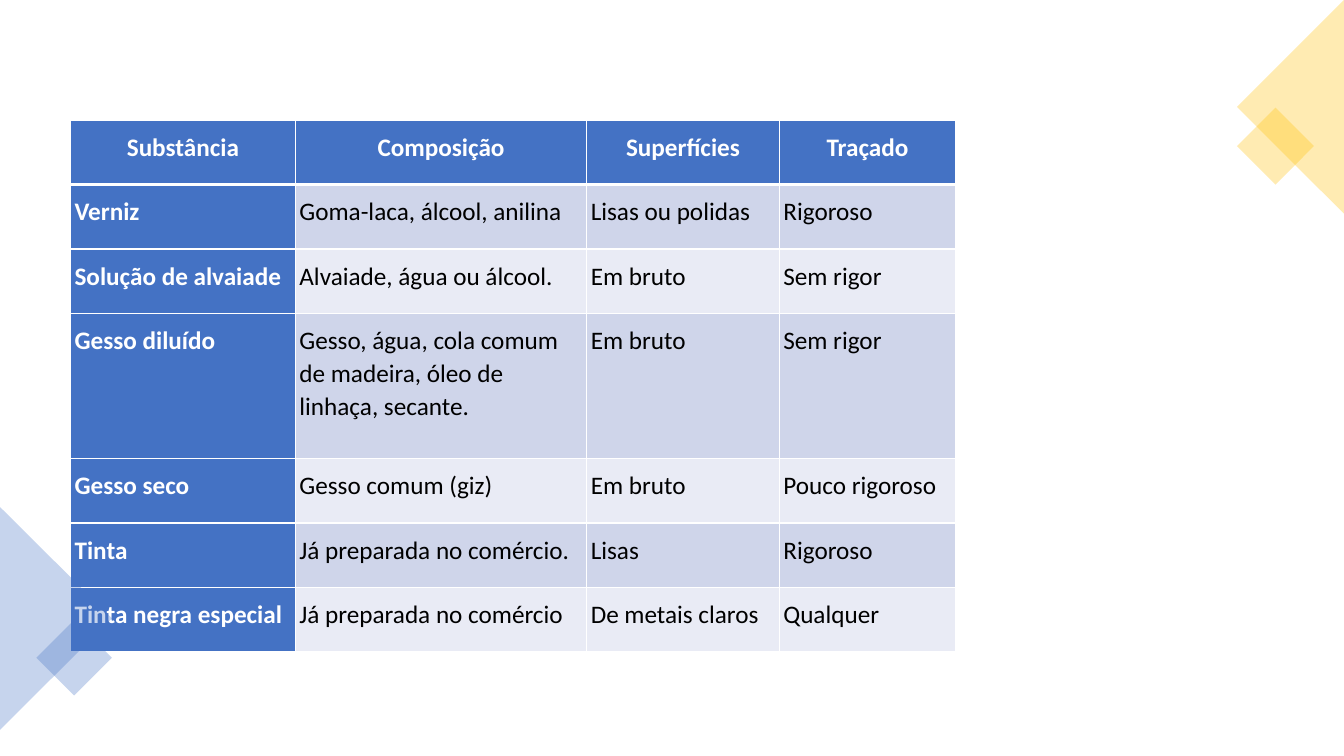
import dataclasses

import lxml.etree
import pptx
import pptx.dml.color
import pptx.enum.shapes
import pptx.enum.text
import pptx.oxml.ns
import pptx.util

Inches = pptx.util.Inches
Pt = pptx.util.Pt
RGBColor = pptx.dml.color.RGBColor
Shape = pptx.enum.shapes.MSO_SHAPE
Align = pptx.enum.text.PP_ALIGN
qn = pptx.oxml.ns.qn


@dataclasses.dataclass(frozen=True)
class Theme:
    font: str = "Calibri"
    size: int = 18
    blue: str = "4472C4"
    gold: str = "FFC000"
    band_dark: str = "CFD5EA"
    band_light: str = "E9EBF5"
    white: str = "FFFFFF"
    black: str = "000000"
    opacity: int = 30
    thin: int = 1
    thick: int = 3


class SlideBuilder:
    def __init__(self, prs, theme):
        self.theme = theme
        self.slide = prs.slides.add_slide(prs.slide_layouts[6])

    def borders(self, cell, top, bottom):
        tcPr = cell._tc.get_or_add_tcPr()
        widths = {"lnL": self.theme.thin, "lnR": self.theme.thin, "lnT": top, "lnB": bottom}
        for side, width in widths.items():
            ln = lxml.etree.SubElement(tcPr, qn("a:" + side), w=str(Pt(width)))
            fill = lxml.etree.SubElement(ln, qn("a:solidFill"))
            lxml.etree.SubElement(fill, qn("a:srgbClr"), val=self.theme.white)

    def cell(self, cell, text, row, col):
        t = self.theme
        heading = row == 0 or col == 0
        self.borders(cell, t.thick if row == 1 else t.thin, t.thick if row == 0 else t.thin)
        band = t.band_dark if row % 2 else t.band_light
        cell.fill.solid()
        cell.fill.fore_color.rgb = RGBColor.from_string(t.blue if heading else band)
        cell.margin_left = cell.margin_right = Inches(0.04)
        cell.margin_top, cell.margin_bottom = Inches(0.1), 0
        cell.text_frame.text = text
        p = cell.text_frame.paragraphs[0]
        p.alignment = Align.CENTER if row == 0 else Align.LEFT
        p.line_spacing = 1.07
        p.space_after = Pt(8)
        r = p.runs[0]
        r.font.name = t.font
        r.font.size = Pt(t.size)
        r.font.bold = heading
        r.font.color.rgb = RGBColor.from_string(t.white if heading else t.black)

    def table(self, left, top, widths, heights, rows):
        frame = self.slide.shapes.add_table(
            len(heights), len(widths), Inches(left), Inches(top),
            Inches(sum(widths)), Inches(sum(heights)))
        table = frame.table
        for column, width in zip(table.columns, widths):
            column.width = Inches(width)
        for line, height in zip(table.rows, heights):
            line.height = Inches(height)
        for row, texts in enumerate(rows):
            for col, text in enumerate(texts):
                self.cell(table.cell(row, col), text, row, col)

    def ornament(self, kind, left, top, width, height, rotation, color):
        sp = self.slide.shapes.add_shape(
            kind, Inches(left), Inches(top), Inches(width), Inches(height))
        sp.rotation = rotation
        sp.shadow.inherit = False
        sp.line.fill.background()
        sp.fill.solid()
        sp.fill.fore_color.rgb = RGBColor.from_string(color)
        clr = sp._element.spPr.find(qn("a:solidFill")).find(qn("a:srgbClr"))
        lxml.etree.SubElement(clr, qn("a:alpha"), val=str(self.theme.opacity * 1000))


ROWS = [
    ("Substância", "Composição", "Superfícies", "Traçado"),
    ("Verniz", "Goma-laca, álcool, anilina", "Lisas ou polidas", "Rigoroso"),
    ("Solução de alvaiade", "Alvaiade, água ou álcool.", "Em bruto", "Sem rigor"),
    ("Gesso diluído", "Gesso, água, cola comum de madeira, óleo de linhaça, secante.",
     "Em bruto", "Sem rigor"),
    ("Gesso seco", "Gesso comum (giz)", "Em bruto", "Pouco rigoroso"),
    ("Tinta", "Já preparada no comércio.", "Lisas", "Rigoroso"),
    ("Tinta negra especial", "Já preparada no comércio", "De metais claros", "Qualquer"),
]


def main():
    prs = pptx.Presentation()
    prs.slide_width, prs.slide_height = Inches(13.33), Inches(7.5)
    theme = Theme()
    s = SlideBuilder(prs, theme)
    heights = [0.64] * len(ROWS)
    heights[3] = 1.44
    s.table(0.7, 1.19, [2.23, 2.89, 1.91, 1.75], heights, ROWS)
    s.ornament(Shape.ISOSCELES_TRIANGLE, -0.55, 5.58, 2.21, 1.11, 90, theme.blue)
    s.ornament(Shape.RECTANGLE, 0.47, 6.26, 0.53, 0.53, 45, theme.blue)
    s.ornament(Shape.RECTANGLE, 12.38, 1.18, 0.54, 0.54, 45, theme.gold)
    s.ornament(Shape.ISOSCELES_TRIANGLE, 11.74, 0.53, 2.12, 1.06, 270, theme.gold)
    prs.save("out.pptx")


if __name__ == "__main__":
    main()
